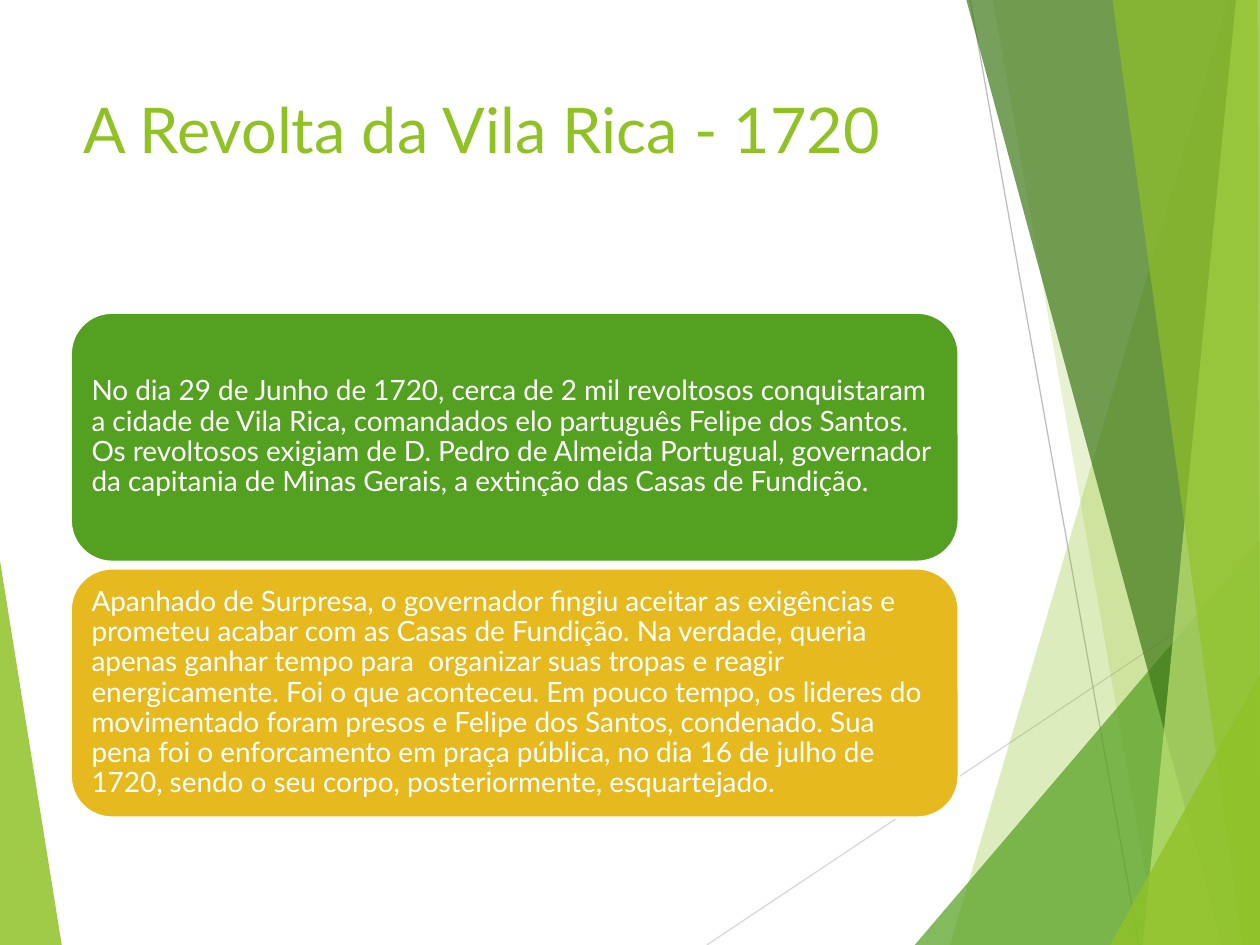
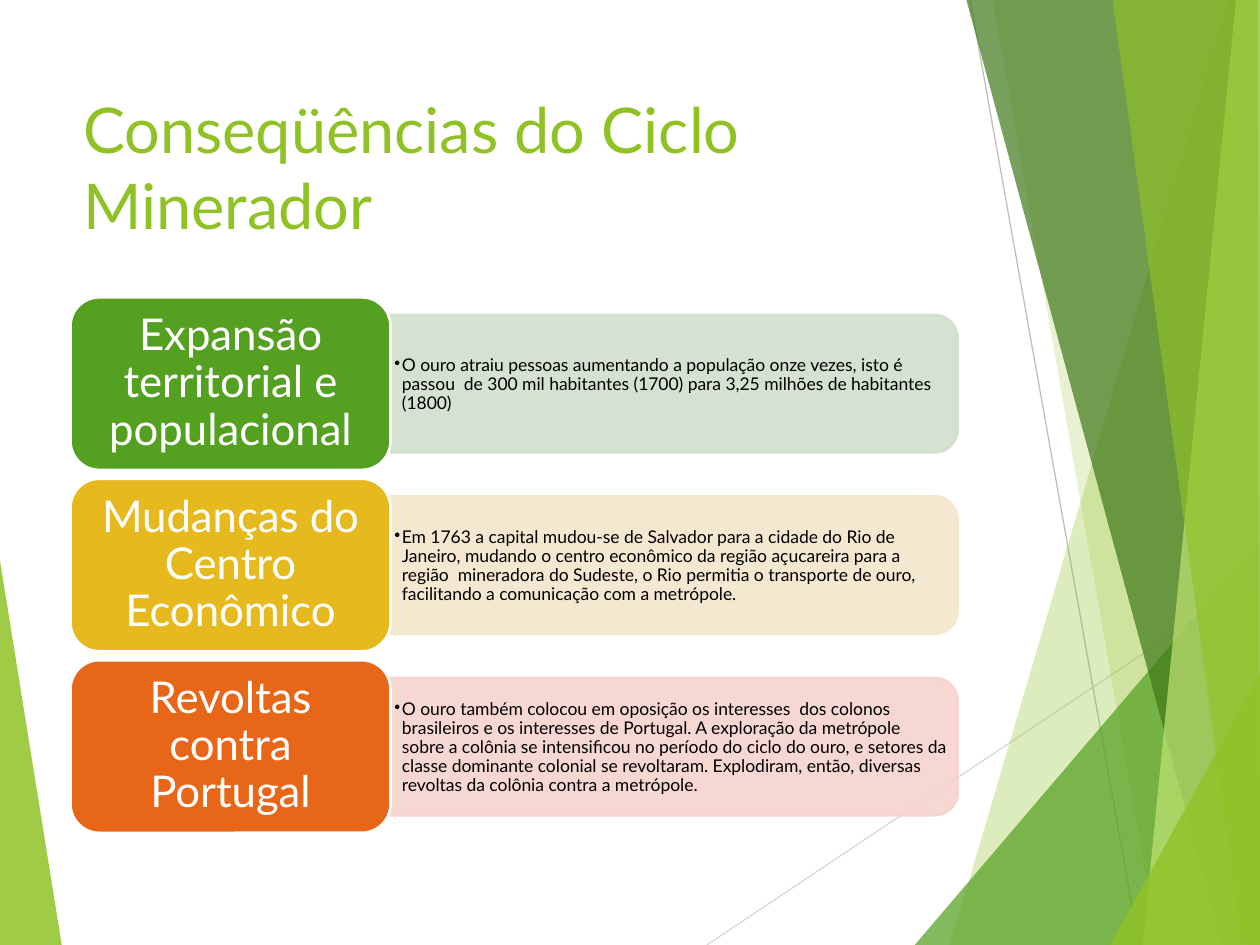
"""Build two slides on the gold cycle in colonial Brazil."""
from typing import NamedTuple

import pptx
import pptx.dml.color
import pptx.enum.shapes
import pptx.enum.text
import pptx.oxml.ns
import pptx.oxml.xmlchemy
import pptx.util
from lxml import etree

SCALE = 9144
FONT = "Lato"
HUES = {
    "lime": "90C226", "green": "54A021", "forest": "3F7819", "pale": "C0E474",
    "gold": "E6B91E", "orange": "E76618", "mint": "D1DFCD", "cream": "F5E6CD",
    "rose": "F6D3CC", "white": "FFFFFF", "black": "000000",
    "silver": "D9D9D9", "gray": "BFBFBF",
}
KIND = pptx.enum.shapes.MSO_SHAPE
ALIGN = pptx.enum.text.PP_ALIGN
ANCHOR = pptx.enum.text.MSO_ANCHOR
LEFT, WIDTH = 56, 705


class Box(NamedTuple):
    """Left, top, width and height in px."""
    left: int
    top: int
    width: int
    height: int


class Wing(NamedTuple):
    """A translucent background polygon."""
    hue: str
    alpha: int
    dots: tuple[tuple[int, int], ...]


class Ray(NamedTuple):
    """A thin background line."""
    hue: str
    start: tuple[int, int]
    end: tuple[int, int]


class Style(NamedTuple):
    """Text size, colour, alignment and insets."""
    size: int
    hue: str
    align: ALIGN
    inset: tuple[int, int]
    gap: float = 0.9


class Card(NamedTuple):
    """A filled card with its text."""
    hue: str
    text: str


class Row(NamedTuple):
    """A heading card with its tinted detail bar."""
    head: Card
    bar: Card


TITLE = Style(36, "lime", ALIGN.LEFT, (10, 5), 1.0)
STORY = Style(16, "white", ALIGN.LEFT, (7, 7))
HEAD = Style(25, "white", ALIGN.CENTER, (10, 5))
NOTE = Style(10, "black", ALIGN.LEFT, (4, 2))

LEAF = Wing("lime", 85, ((0, 445), (49, 750), (0, 750)))
RAYS = (
    Ray("silver", (561, 750), (1000, 457)),
    Ray("gray", (770, 0), (904, 750)),
)
WINGS = (
    Wing("lime", 30, ((975, 0), (754, 750), (1000, 750), (1000, 0))),
    Wing("lime", 20, ((788, 0), (919, 750), (1000, 750), (1000, 0))),
    Wing("green", 72, ((726, 750), (1000, 429), (1000, 750))),
    Wing("forest", 70, ((767, 0), (970, 750), (1000, 750), (1000, 0))),
    Wing("pale", 70, ((981, 0), (907, 750), (1000, 750), (1000, 0))),
    Wing("lime", 65, ((883, 0), (986, 750), (1000, 750), (998, 0))),
    Wing("lime", 80, ((881, 750), (1000, 535), (1000, 750))),
)
CARDS = (
    Card("green", "No dia 29 de Junho de 1720, cerca de 2 mil revoltosos conquistaram a cidade de Vila Rica, "
         "comandados elo partuguês Felipe dos Santos. Os revoltosos exigiam de D. Pedro de Almeida Portugual, "
         "governador da capitania de Minas Gerais, a extinção das Casas de Fundição."),
    Card("gold", "Apanhado de Surpresa, o governador fingiu aceitar as exigências e prometeu acabar com as Casas "
         "de Fundição. Na verdade, queria apenas ganhar tempo para  organizar suas tropas e reagir "
         "energicamente. Foi o que aconteceu. Em pouco tempo, os lideres do movimentado foram presos e Felipe "
         "dos Santos, condenado. Sua pena foi o enforcamento em praça pública, no dia 16 de julho de 1720, "
         "sendo o seu corpo, posteriormente, esquartejado."),
)
ROWS = (
    Row(Card("green", "Expansão territorial e populacional"),
        Card("mint", "O ouro atraiu pessoas aumentando a população onze vezes, isto é passou  de 300 mil "
             "habitantes (1700) para 3,25 milhões de habitantes (1800)")),
    Row(Card("gold", "Mudanças do Centro Econômico"),
        Card("cream", "Em 1763 a capital mudou-se de Salvador para a cidade do Rio de Janeiro, mudando o centro "
             "econômico da região açucareira para a região  mineradora do Sudeste, o Rio permitia o transporte "
             "de ouro, facilitando a comunicação com a metrópole.")),
    Row(Card("orange", "Revoltas contra Portugal"),
        Card("rose", "O ouro também colocou em oposição os interesses  dos colonos brasileiros e os interesses "
             "de Portugal. A exploração da metrópole sobre a colônia se intensificou no período do ciclo do "
             "ouro, e setores da classe dominante colonial se revoltaram. Explodiram, então, diversas revoltas "
             "da colônia contra a metrópole.")),
)


def px(count: int) -> pptx.util.Emu:
    """Turn px into EMU."""
    return pptx.util.Emu(count * SCALE)


def place(box: Box) -> tuple[pptx.util.Emu, ...]:
    """Turn a box into four EMU lengths."""
    return tuple(px(side) for side in box)


def tint(hue: str) -> pptx.dml.color.RGBColor:
    """Look up a colour."""
    return pptx.dml.color.RGBColor.from_string(HUES[hue])


def paint(shape, hue: str, edge: str | None = None, alpha: int = 100) -> None:
    """Set fill, outline and opacity of a shape."""
    shape.shadow.inherit = False
    shape.fill.solid()
    shape.fill.fore_color.rgb = tint(hue)
    if edge:
        shape.line.color.rgb = tint(edge)
        shape.line.width = pptx.util.Pt(1.5)
    else:
        shape.line.fill.background()
    if alpha < 100:
        for node in list(shape.element.spPr.iter(pptx.oxml.ns.qn("a:srgbClr"))):
            etree.SubElement(node, pptx.oxml.ns.qn("a:alpha"), val=str(alpha * 1000))


def write(shape, text: str, style: Style, anchor: ANCHOR = ANCHOR.MIDDLE) -> None:
    """Put styled text into a shape."""
    frame = shape.text_frame
    frame.text = text
    frame.word_wrap = True
    frame.auto_size = pptx.enum.text.MSO_AUTO_SIZE.NONE
    frame.vertical_anchor = anchor
    frame.margin_left = frame.margin_right = px(style.inset[0])
    frame.margin_top = frame.margin_bottom = px(style.inset[1])
    para = frame.paragraphs[0]
    para.alignment = style.align
    para.line_spacing = style.gap
    for run in para.runs:
        run.font.name = FONT
        run.font.size = pptx.util.Pt(style.size)
        run.font.color.rgb = tint(style.hue)


def mark(para) -> None:
    """Give a paragraph a hanging bullet."""
    props = para._p.get_or_add_pPr()
    props.set("marL", str(px(6)))
    props.set("indent", str(px(-6)))
    etree.SubElement(props, pptx.oxml.ns.qn("a:buChar"), char="•")


def draw_wing(slide, wing: Wing) -> None:
    """Draw one background polygon."""
    first, *rest = wing.dots
    pen = slide.shapes.build_freeform(*first, scale=SCALE)
    pen.add_line_segments(rest, close=True)
    paint(pen.convert_to_shape(), wing.hue, alpha=wing.alpha)


def draw_ray(slide, ray: Ray) -> None:
    """Draw one background line."""
    ends = [px(side) for side in ray.start + ray.end]
    line = slide.shapes.add_connector(pptx.enum.shapes.MSO_CONNECTOR.STRAIGHT, *ends)
    line.line.color.rgb = tint(ray.hue)
    line.line.width = pptx.util.Pt(0.75)
    etree.SubElement(line.element.spPr, pptx.oxml.ns.qn("a:effectLst"))


def draw_card(slide, box: Box, card: Card, style: Style) -> None:
    """Draw a rounded card with text."""
    shape = slide.shapes.add_shape(KIND.ROUNDED_RECTANGLE, *place(box))
    paint(shape, card.hue, "white")
    write(shape, card.text, style)


def draw_bar(slide, box: Box, card: Card) -> None:
    """Draw a bar rounded on the right, with a bulleted note."""
    shift = (box.width - box.height) // 2
    turned = Box(box.left + shift, box.top - shift, box.height, box.width)
    shape = slide.shapes.add_shape(KIND.ROUND_2_SAME_RECTANGLE, *place(turned))
    shape.rotation = 90
    paint(shape, card.hue, card.hue, 90)
    area = Box(box.left, box.top + 6, box.width - 5, box.height - 10)
    note = slide.shapes.add_textbox(*place(area))
    write(note, card.text, NOTE)
    mark(note.text_frame.paragraphs[0])


def add_slide(deck, title: str):
    """Add a slide with the shared background and title."""
    slide = deck.slides.add_slide(deck.slide_layouts[5])
    draw_wing(slide, LEAF)
    for ray in RAYS:
        draw_ray(slide, ray)
    for wing in WINGS:
        draw_wing(slide, wing)
    head = slide.shapes.title
    head.left, head.top, head.width, head.height = place(Box(LEFT, 67, WIDTH, 144))
    write(head, title, TITLE, ANCHOR.TOP)
    return slide


def main() -> None:
    """Build and save the deck."""
    deck = pptx.Presentation()
    deck.slide_width, deck.slide_height = px(1000), px(750)

    slide = add_slide(deck, "A Revolta da Vila Rica - 1720")
    for spot, card in enumerate(CARDS):
        draw_card(slide, Box(LEFT, 248 + 203 * spot, WIDTH, 198), card, STORY)

    slide = add_slide(deck, "Conseqüências do Ciclo Minerador")
    for spot, row in enumerate(ROWS):
        top = 236 + 144 * spot
        draw_bar(slide, Box(309, top + 14, 451, 109), row.bar)
        draw_card(slide, Box(LEFT, top, 254, 137), row.head, HEAD)

    deck.save("out.pptx")


if __name__ == "__main__":
    main()
